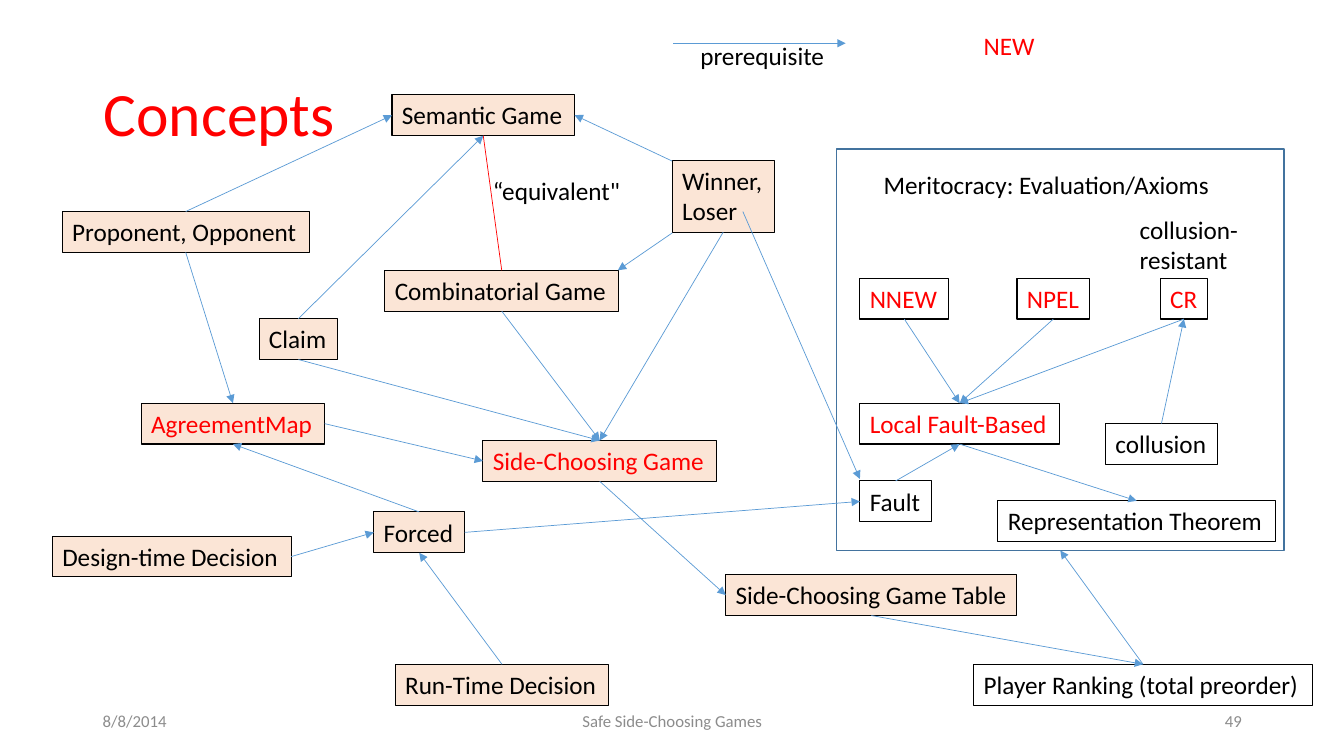
"""Build the concept map of side-choosing games."""
from lxml import etree
from pptx import Presentation
from pptx import util as u
from pptx.dml.color import RGBColor
from pptx.enum import shapes, text
from pptx.oxml import ns

BLACK, RED, GREY, BLUE, PEACH = "000000", "FF0000", "8C8C8C", "5B9BD5", "FBE5D6"
TOP, LEFT, BOTTOM, RIGHT = range(4)
ROW = 1.03

GAME_CONCEPTS = {
    "Semantic Game": (9.88, 2.39, 4.6, BLACK),
    "Combinatorial Game": (9.7, 6.81, 5.89, BLACK),
    "AgreementMap": (3.56, 10.16, 4.62, RED),
    "Side-Choosing Game": (12.17, 11.1, 5.89, RED),
    "Design-time Decision": (1.32, 13.51, 6.02, BLACK),
    "Side-Choosing Game Table": (18.29, 14.48, 7.34, BLACK),
    "Forced": (9.42, 12.9, 2.29, BLACK),
    "Run-Time Decision": (9.96, 16.74, 5.38, BLACK),
    "Proponent, Opponent": (1.57, 5.33, 6.22, BLACK),
    "Winner,\nLoser": (16.94, 4.04, 2.57, BLACK),
    "Claim": (6.53, 8.03, 1.98, BLACK),
}
EVALUATION_CONCEPTS = {
    "NNEW": (21.67, 7.01, 2.24, RED),
    "NPEL": (25.63, 7.01, 1.83, RED),
    "CR": (29.24, 7.01, 1.19, RED),
    "Local Fault-Based": (21.67, 10.16, 5.03, RED),
    "Player Ranking (total preorder)": (24.54, 16.74, 8.53, BLACK),
    "collusion": (27.86, 10.67, 2.82, BLACK),
    "Fault": (21.67, 12.12, 1.8, BLACK),
    "Representation Theorem": (25.15, 12.62, 6.99, BLACK),
}
LABELS = {
    "Meritocracy: Evaluation/Axioms": (22.02, 4.14, 8.79, BLACK),
    "prerequisite": (17.4, 0.89, 3.66, BLACK),
    "NEW": (24.54, 0.64, 1.8, RED),
    "“equivalent\"": (12.17, 4.29, 3.76, BLACK),
    "collusion-\nresistant": (28.47, 5.28, 3.02, BLACK),
}
PREREQUISITES = [
    ("AgreementMap", RIGHT, "Side-Choosing Game", LEFT),
    ("Combinatorial Game", BOTTOM, "Side-Choosing Game", TOP),
    ("Design-time Decision", RIGHT, "Forced", LEFT),
    ("Forced", TOP, "AgreementMap", BOTTOM),
    ("NNEW", BOTTOM, "Local Fault-Based", TOP),
    ("NPEL", BOTTOM, "Local Fault-Based", TOP),
    ("CR", BOTTOM, "Local Fault-Based", TOP),
    ("Side-Choosing Game", BOTTOM, "Side-Choosing Game Table", LEFT),
    ("Side-Choosing Game Table", BOTTOM, "Player Ranking (total preorder)", TOP),
    ("Run-Time Decision", TOP, "Forced", BOTTOM),
    ("Player Ranking (total preorder)", TOP, "Meritocracy", BOTTOM),
    ("Proponent, Opponent", TOP, "Semantic Game", LEFT),
    ("Proponent, Opponent", BOTTOM, "AgreementMap", TOP),
    ("collusion", TOP, "CR", BOTTOM),
    ("Winner,\nLoser", BOTTOM, "Side-Choosing Game", TOP),
    ("Fault", TOP, "Local Fault-Based", BOTTOM),
    ("Forced", RIGHT, "Fault", LEFT),
    ("Claim", TOP, "Semantic Game", BOTTOM),
    ("Claim", BOTTOM, "Side-Choosing Game", TOP),
    ("Local Fault-Based", BOTTOM, "Representation Theorem", TOP),
]
LOOSE_ARROWS = [
    (16.97, 1.09, 21.31, 1.09),
    (16.94, 4.06, 14.48, 2.9),
    (16.94, 5.87, 15.57, 6.81),
    (18.72, 5.33, 21.67, 12.07),
]


def color(code):
    return RGBColor.from_string(code)


def write(box, words, size=18, ink=BLACK, align=text.PP_ALIGN.LEFT,
          anchor=text.MSO_ANCHOR.TOP, spacing=1.0, right_inset=0.0):
    frame = box.text_frame
    frame.word_wrap = True
    frame.vertical_anchor = anchor
    frame.margin_right = u.Cm(right_inset)
    for index, line in enumerate(words.split("\n")):
        para = frame.add_paragraph() if index else frame.paragraphs[0]
        para.alignment = align
        para.line_spacing = spacing
        span = para.add_run()
        span.text = line
        span.font.name = "Calibri"
        span.font.size = u.Pt(size)
        span.font.color.rgb = color(ink)


class ConceptMap:
    def __init__(self, page):
        self.page = page
        self.boxes = {}

    def label(self, words, left, top, width, height, **style):
        box = self.page.shapes.add_textbox(*map(u.Cm, (left, top, width, height)))
        write(box, words, **style)
        return box

    def concept(self, words, left, top, width, ink, fill=None):
        height = ROW if "\n" not in words else 1.81
        box = self.label(words, left, top, width, height, ink=ink)
        box.line.color.rgb = color(BLACK)
        box.line.width = u.Pt(0.75)
        if fill:
            box.fill.solid()
            box.fill.fore_color.rgb = color(fill)
        self.boxes[words] = box

    def panel(self, name, left, top, width, height):
        box = self.page.shapes.add_shape(
            shapes.MSO_SHAPE.RECTANGLE, *map(u.Cm, (left, top, width, height)))
        box.shadow.inherit = False
        box.fill.background()
        box.line.color.rgb = color("43739E")
        box.line.width = u.Pt(1)
        self.boxes[name] = box

    def line(self, points=(0, 0, 0, 0), ink=BLUE, arrow=True):
        link = self.page.shapes.add_connector(
            shapes.MSO_CONNECTOR.STRAIGHT, *map(u.Cm, points))
        link.line.color.rgb = color(ink)
        link.line.width = u.Pt(0.5)
        if arrow:
            etree.SubElement(link.line._get_or_add_ln(), ns.qn("a:tailEnd"), type="triangle")
        etree.SubElement(link._element.spPr, ns.qn("a:effectLst"))
        return link

    def join(self, source, source_side, target, target_side, **style):
        link = self.line(**style)
        link.begin_connect(self.boxes[source], source_side)
        link.end_connect(self.boxes[target], target_side)


def main():
    deck = Presentation()
    deck.slide_width, deck.slide_height = u.Cm(33.87), u.Cm(19.05)
    concepts = ConceptMap(deck.slides.add_slide(deck.slide_layouts[6]))
    middle = text.MSO_ANCHOR.MIDDLE

    concepts.label("Concepts", 2.36, 1.09, 29.21, 3.68, size=44, ink=RED,
                   anchor=middle, spacing=0.9)
    concepts.panel("Meritocracy", 21.08, 3.76, 11.28, 10.11)
    for words, place in GAME_CONCEPTS.items():
        concepts.concept(words, *place, fill=PEACH)
    for words, place in EVALUATION_CONCEPTS.items():
        concepts.concept(words, *place)
    for words, (left, top, width, ink) in LABELS.items():
        concepts.label(words, left, top, width, ROW * len(words.split("\n")), ink=ink)

    for prerequisite in PREREQUISITES:
        concepts.join(*prerequisite)
    concepts.join("Combinatorial Game", TOP, "Semantic Game", BOTTOM, ink=RED, arrow=False)
    for points in LOOSE_ARROWS:
        concepts.line(points)

    for words, left, width, align in (
            ("8/8/2014", 2.34, 7.62, text.PP_ALIGN.LEFT),
            ("Safe Side-Choosing Games", 11.23, 11.43, text.PP_ALIGN.CENTER),
            ("49", 23.93, 7.62, text.PP_ALIGN.RIGHT)):
        concepts.label(words, left, 17.65, width, 1.02, size=12, ink=GREY,
                       align=align, anchor=middle, right_inset=0.25)
    deck.save("out.pptx")


if __name__ == "__main__":
    main()
